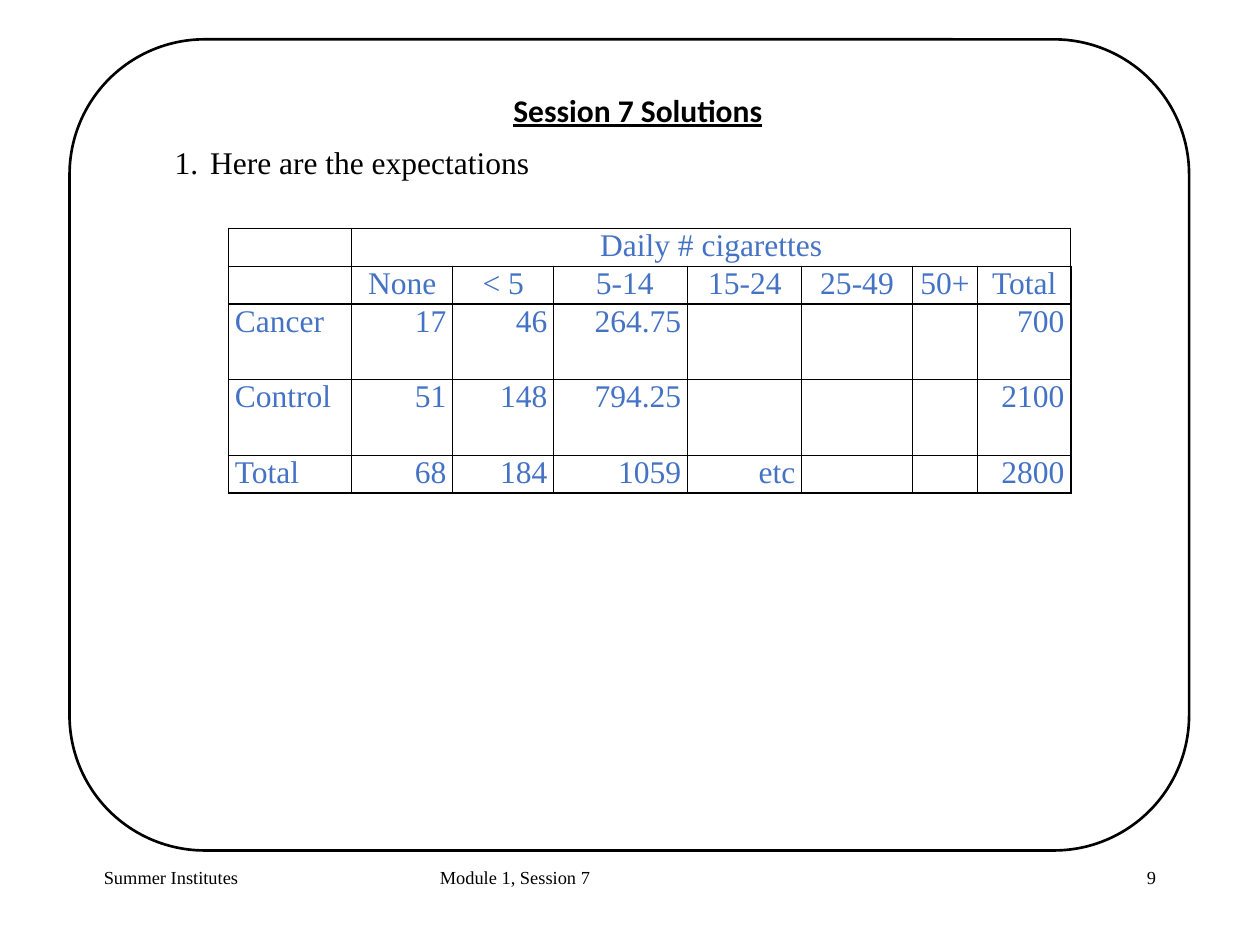
from lxml import etree
from pptx import Presentation
from pptx import util as u
from pptx.dml import color
from pptx.enum import shapes, text
from pptx.oxml import ns

Pt = u.Pt
ALIGN = text.PP_ALIGN
SERIF = "Times New Roman"
BLACK, BLUE = "000000", "4472C4"
WIDTHS = [94, 77, 77, 102, 87, 84, 50, 71]
LINES = [1, 1, 2, 2, 1]
ROW = 28.8
ROWS = [
    ["", "Daily # cigarettes"] + [""] * 6,
    ["", "None", "< 5", " 5-14", "15-24", "25-49", "50+", "Total"],
    ["Cancer", "17", "46", "264.75", "", "", "", "700"],
    ["Control", "51", "148", "794.25", "", "", "", "2100"],
    ["Total", "68", "184", "1059", "etc", "", "", "2800"],
]
FOOTER = [
    (72, 200, "Summer Institutes", ALIGN.LEFT),
    (328, 304, "Module 1, Session 7", ALIGN.LEFT),
    (688, 200, "9", ALIGN.RIGHT),
]


def rgb(code):
    """Turn a hex string into a colour."""
    return color.RGBColor.from_string(code)


def apply(item, form):
    """Set each attribute of an item from a dict."""
    for key, value in form.items():
        setattr(item, key, value)


def write(para, words, size, tint=BLACK, face=SERIF, form=None, **font):
    """Put one formatted run into a paragraph."""
    apply(para, form or {})
    run = para.add_run()
    run.text = words
    apply(run.font, {"size": Pt(size), "name": face, **font})
    run.font.color.rgb = rgb(tint)


def add_box(slide, left, top, width, height):
    """Add a wrapping text box and return its frame."""
    box = slide.shapes.add_textbox(Pt(left), Pt(top), Pt(width), Pt(height))
    box.text_frame.word_wrap = True
    return box.text_frame


def add_frame(slide):
    """Draw the rounded border of the slide."""
    frame = slide.shapes.add_shape(
        shapes.MSO_SHAPE.ROUNDED_RECTANGLE, Pt(53), Pt(30), Pt(853), Pt(618))
    frame.shadow.inherit = False
    frame.fill.background()
    frame.line.color.rgb = rgb(BLACK)
    frame.line.width = Pt(2)


def number(para, indent):
    """Number a paragraph with a hanging indent."""
    props = para._p.get_or_add_pPr()
    props.set("marL", str(Pt(indent)))
    props.set("indent", str(-Pt(indent)))
    etree.SubElement(props, ns.qn("a:buAutoNum"), type="arabicPeriod")


def add_body(slide):
    """Add the heading and the numbered answer."""
    frame = add_box(slide, 126, 66, 720, 74)
    write(frame.paragraphs[0], "Session 7 Solutions", 24, face="Calibri",
          form={"alignment": ALIGN.CENTER}, bold=True, underline=True)
    para = frame.add_paragraph()
    write(para, "Here are the expectations", 24, form={
        "line_spacing": 1.07, "space_before": Pt(8.4), "space_after": Pt(12)})
    number(para, 27)


def add_edge(cell, side, width):
    """Draw one border of a cell."""
    line = etree.SubElement(cell._tc.get_or_add_tcPr(), ns.qn("a:ln" + side),
                            w=str(Pt(width)))
    fill = etree.SubElement(line, ns.qn("a:solidFill"))
    etree.SubElement(fill, ns.qn("a:srgbClr"), val=BLACK)


def add_table(slide):
    """Add the table of expected counts."""
    last, end = len(ROWS) - 1, len(WIDTHS) - 1
    table = slide.shapes.add_table(
        len(ROWS), len(WIDTHS), Pt(174), Pt(174),
        Pt(sum(WIDTHS)), Pt(ROW * sum(LINES))).table
    apply(table, {"first_row": False, "horz_banding": False})
    for col, width in zip(table.columns, WIDTHS):
        col.width = Pt(width)
    for row, lines in zip(table.rows, LINES):
        row.height = Pt(ROW * lines)
    for i, row in enumerate(ROWS):
        for j, words in enumerate(row):
            cell = table.cell(i, j)
            apply(cell, {"margin_left": Pt(5), "margin_right": Pt(5),
                         "margin_top": 0, "margin_bottom": 0})
            outer = {"L": j == 0, "R": j == end, "T": i == 0, "B": i == last}
            for side, thick in outer.items():
                add_edge(cell, side, 1.5 if thick else 1)
            cell.fill.background()
            if words:
                side = (ALIGN.CENTER if i < 2 else
                        ALIGN.RIGHT if j else ALIGN.LEFT)
                write(cell.text_frame.paragraphs[0], words, 24, BLUE,
                      form={"alignment": side})
    table.cell(0, 1).merge(table.cell(0, end))


def main():
    """Build and save the slide."""
    deck = Presentation()
    apply(deck, {"slide_width": Pt(960), "slide_height": Pt(720)})
    slide = deck.slides.add_slide(deck.slide_layouts[6])
    add_frame(slide)
    for left, width, words, side in FOOTER:
        frame = add_box(slide, left, 656, width, 48)
        write(frame.paragraphs[0], words, 14, form={"alignment": side})
    add_body(slide)
    add_table(slide)
    deck.save("out.pptx")


if __name__ == "__main__":
    main()
